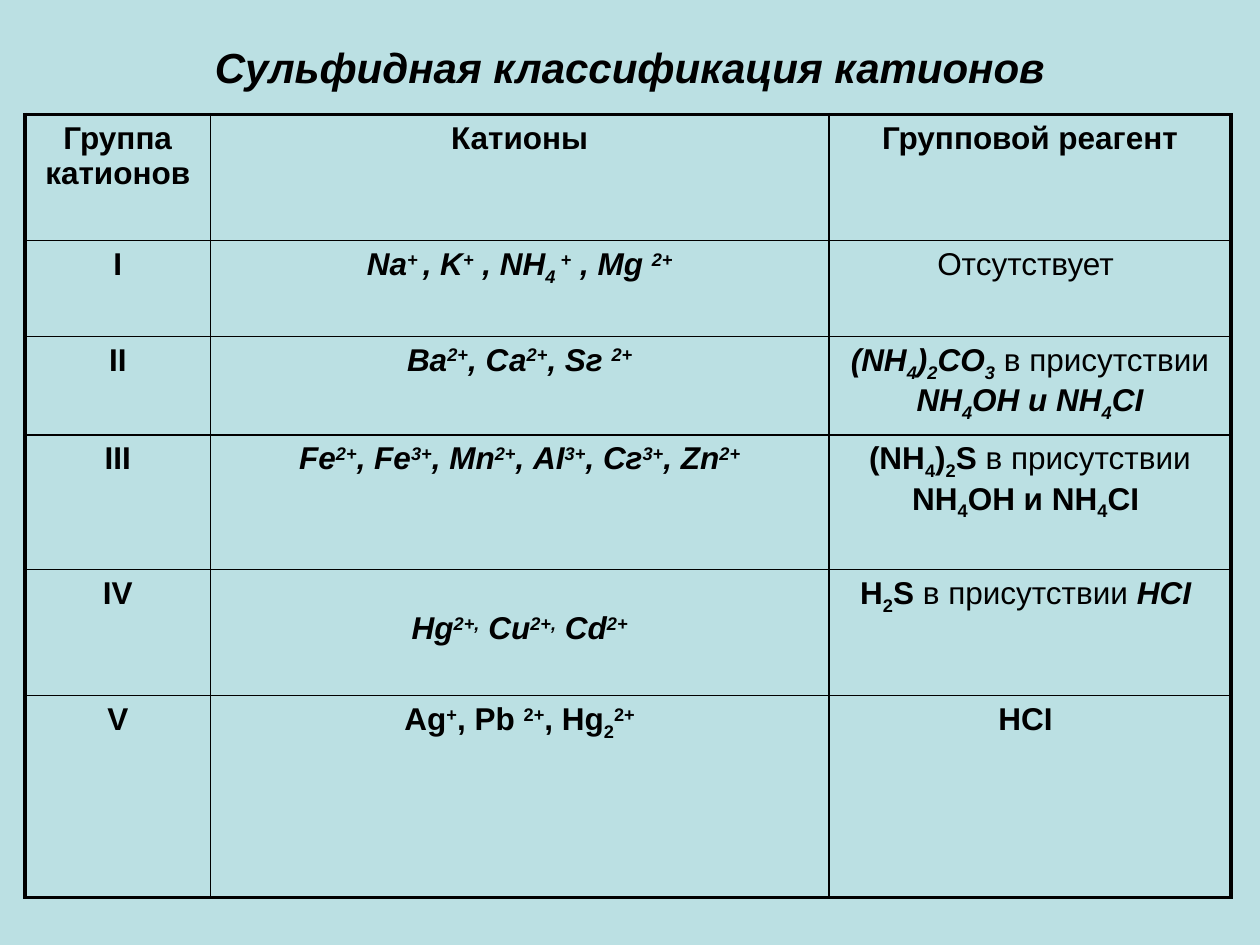
import pptx
import pptx.util
import pptx.dml.color
import pptx.enum.text
import pptx.oxml
import pptx.oxml.ns

Inches = pptx.util.Inches
Pt = pptx.util.Pt
INK = "000000"
MARKS = {"/": "italic", "~": "regular", "^": "superscript", "_": "subscript"}


def color(value):
    return pptx.dml.color.RGBColor.from_string(value)


def add_runs(paragraph, marked_text, size):
    paragraph.alignment = pptx.enum.text.PP_ALIGN.CENTER
    active = set()
    text = ""
    for character in marked_text + "\n":
        if character not in MARKS and character != "\n":
            text += character
            continue
        if text:
            run = paragraph.add_run()
            run.text = text
            font = run.font
            font.name = "Arial"
            font.size = Pt(size)
            font.bold = "regular" not in active
            font.italic = "italic" in active
            font.color.rgb = color(INK)
            if "superscript" in active:
                font._element.set("baseline", "30000")
            elif "subscript" in active:
                font._element.set("baseline", "-25000")
            text = ""
        if character in MARKS:
            active ^= {MARKS[character]}
        elif paragraph.runs and character == "\n":
            paragraph.add_line_break()
    paragraph._p.remove(paragraph._p[-1])


presentation = pptx.Presentation()
presentation.slide_width = Inches(10)
presentation.slide_height = Inches(7.5)
slide = presentation.slides.add_slide(presentation.slide_layouts[6])
slide.background.fill.solid()
slide.background.fill.fore_color.rgb = color("BBE0E3")

title = slide.shapes.add_textbox(Inches(0.5), Inches(0.3), Inches(9), Inches(0.46))
title.text_frame.word_wrap = True
title.text_frame.vertical_anchor = pptx.enum.text.MSO_ANCHOR.MIDDLE
add_runs(title.text_frame.paragraphs[0], "/Сульфидная классификация катионов/", 24)

rows = [
    ["Группа\nкатионов", "Катионы", "Групповой реагент"],
    ["I", "/Na^+ ^, K^+^ , NH_4 _^+^ , Мg ^2+^/", "~Отсутствует ~"],
    ["II", "/Ва^2+^, Са^2+^, Sг ^2+^/",
     "/(NН_4_)_2_СО_3_/~ в присутствии~\n/NH_4_ОН и NH_4_СI/"],
    ["III", "/Fе^2+^, Fе^3+^, Мn^2+^, АI^3+^, Сг^3+^, Zn^2+^/",
     "(NН_4_)_2_S~ в присутствии~\nNH_4_ОН и NН_4_СI "],
    ["IV", "/Hg^2+,^ Cu^2+,^ Cd^2+^/", "Н_2_S~ в присутствии ~/НСI /"],
    ["V", "Ag^+^, Pb ^2+^, Hg_2_^2+^", "НСI "],
]
column_widths = [1.47, 4.91, 3.19]
row_heights = [1, 0.76, 0.74, 1.07, 1, 1.6]

table = slide.shapes.add_table(
    len(rows), len(column_widths), Inches(0.2), Inches(0.91),
    Inches(sum(column_widths)), Inches(sum(row_heights))).table
table.first_row = False
table.horz_banding = False
for column, width in zip(table.columns, column_widths):
    column.width = Inches(width)
for row, height in zip(table.rows, row_heights):
    row.height = Inches(height)

last_row = len(rows) - 1
last_column = len(column_widths) - 1
for row_index, row in enumerate(rows):
    for column_index, marked_text in enumerate(row):
        cell = table.cell(row_index, column_index)
        cell.fill.background()
        add_runs(cell.text_frame.paragraphs[0], marked_text, 18)
        outer_edges = {
            "lnL": column_index == 0,
            "lnR": column_index == last_column,
            "lnT": row_index == 0,
            "lnB": row_index == last_row,
        }
        properties = cell._tc.get_or_add_tcPr()
        for position, (edge, is_outer) in enumerate(outer_edges.items()):
            width = Pt(2.25 if is_outer else 1)
            properties.insert(position, pptx.oxml.parse_xml(
                f'<a:{edge} {pptx.oxml.ns.nsdecls("a")} w="{width}"><a:solidFill>'
                f'<a:srgbClr val="{INK}"/></a:solidFill></a:{edge}>'))
table.cell(4, 1).margin_top = Inches(0.33)

presentation.save("out.pptx")
